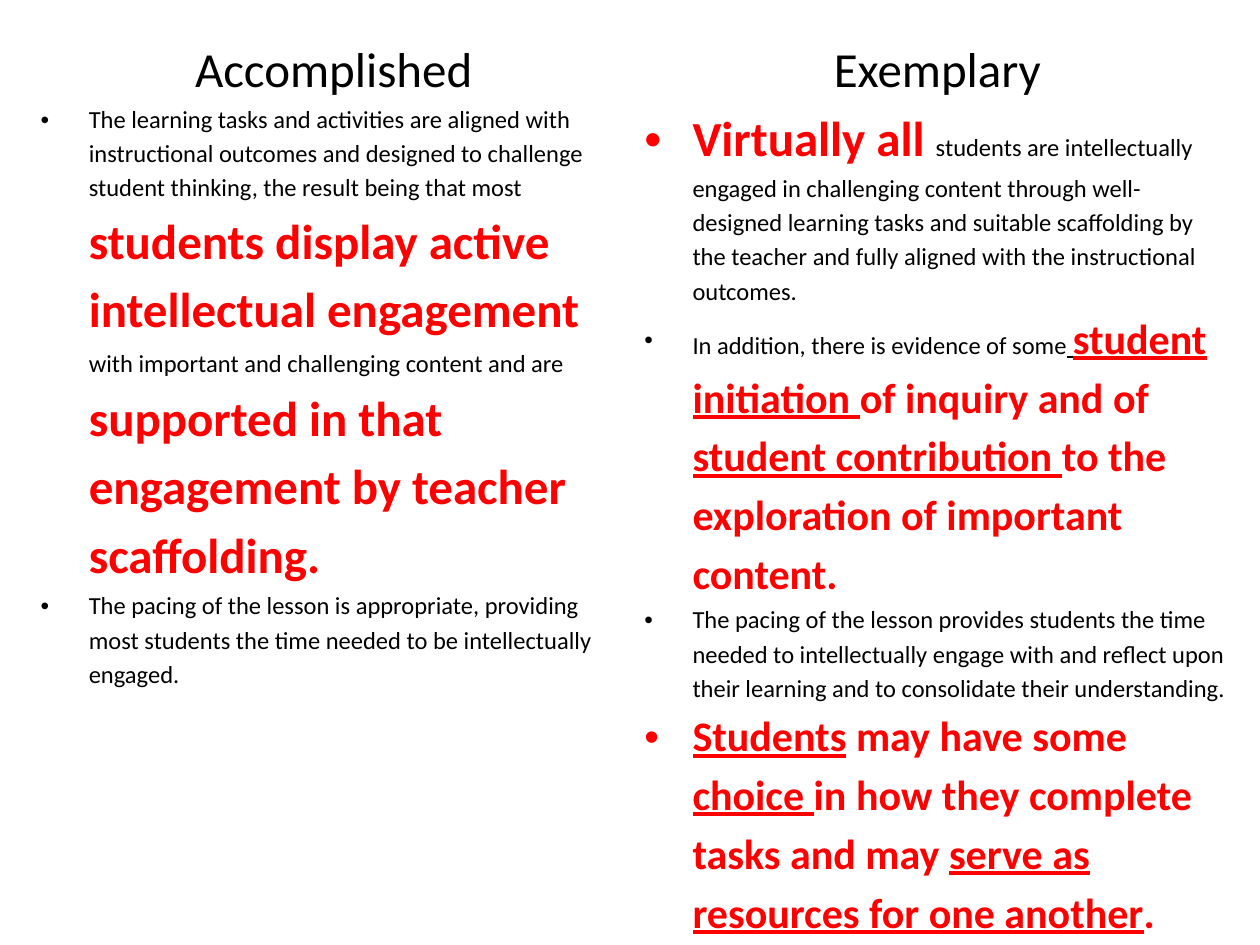
"""Build a slide that compares accomplished and exemplary student engagement."""
from lxml import etree
from pptx import Presentation
from pptx.enum import text as t
from pptx.oxml import ns
from pptx.dml import color
from pptx.util import Cm, Pt

COLORS = {"plain": "000000", "key": "FF0000"}
FONT = "Calibri"

PLAIN = {"size": 14}
BIG = {"size": 28, "bold": True, "color": "key"}
KEY = {"size": 24, "bold": True, "color": "key"}
KEY_LINE = {**KEY, "underline": True}

HEADINGS = ["Accomplished", "Exemplary"]
ACCOMPLISHED = [
    [
        ("The learning tasks and activities are aligned with instructional outcomes and "
         "designed to challenge student thinking, the result being that most ", PLAIN),
        ("students display active intellectual engagement", BIG),
        (" ", KEY),
        ("with important and challenging content and are", PLAIN),
        (" ", {"size": 16}),
        ("supported in that engagement by teacher scaffolding.", BIG),
    ],
    [("The pacing of the lesson is appropriate, providing most students the time needed "
      "to be intellectually engaged.", PLAIN)],
]
EXEMPLARY = [
    [
        ("Virtually all ", BIG),
        ("students are intellectually engaged in challenging content through well-designed "
         "learning tasks and suitable scaffolding by the teacher and fully aligned with "
         "the instructional outcomes.", PLAIN),
    ],
    [
        ("In addition, there is evidence of some", PLAIN),
        (" ", {"size": 14, "underline": True}),
        ("student initiation ", KEY_LINE),
        ("of inquiry and of ", KEY),
        ("student contribution ", KEY_LINE),
        ("to the exploration of important content.", KEY),
    ],
    [("The pacing of the lesson provides students the time needed to intellectually engage "
      "with and reflect upon their learning and to consolidate their understanding.", PLAIN)],
    [
        ("Students", KEY_LINE),
        (" may have some ", KEY),
        ("choice ", KEY_LINE),
        ("in how they complete tasks and may ", KEY),
        ("serve as resources for one another", KEY_LINE),
        (".", KEY),
    ],
]

LEFT, TOP = Cm(0.64), Cm(0.64)
COLUMN_WIDTH = Cm(12.17)
ROW_HEIGHTS = [Cm(1.3), Cm(16.69)]
SIDE_MARGIN = Cm(0.18)
INDENT = Cm(0.97)


def add_text(paragraph, content, size=14, bold=False, underline=False, color_name="plain"):
    run = paragraph.add_run()
    run.text = content
    font = run.font
    font.name, font.size, font.bold, font.underline = FONT, Pt(size), bold, underline
    font.color.rgb = color.RGBColor.from_string(COLORS[color_name])


def add_bullet(paragraph):
    properties = paragraph._p.get_or_add_pPr()
    properties.set("marL", str(INDENT))
    properties.set("indent", str(-INDENT))
    etree.SubElement(properties, ns.qn("a:buFont"), typeface="Arial")
    etree.SubElement(properties, ns.qn("a:buChar"), char="•")


def fill_cell(cell, paragraphs, bulleted):
    cell.fill.background()
    cell.margin_left = cell.margin_right = SIDE_MARGIN
    cell.margin_top = cell.margin_bottom = 0
    cell.vertical_anchor = t.MSO_ANCHOR.TOP if bulleted else t.MSO_ANCHOR.MIDDLE
    frame = cell.text_frame
    for index, runs in enumerate(paragraphs):
        paragraph = frame.add_paragraph() if index else frame.paragraphs[0]
        paragraph.line_spacing = 1.15
        paragraph.alignment = t.PP_ALIGN.LEFT if bulleted else t.PP_ALIGN.CENTER
        if bulleted:
            add_bullet(paragraph)
        for content, style in runs:
            options = dict(style)
            add_text(paragraph, content, color_name=options.pop("color", "plain"), **options)


def main():
    presentation = Presentation()
    presentation.slide_width, presentation.slide_height = Cm(25.4), Cm(19.05)
    slide = presentation.slides.add_slide(presentation.slide_layouts[6])
    shape = slide.shapes.add_table(
        len(ROW_HEIGHTS), len(HEADINGS), LEFT, TOP,
        COLUMN_WIDTH * len(HEADINGS), sum(ROW_HEIGHTS))
    table = shape.table
    for row, height in zip(table.rows, ROW_HEIGHTS):
        row.height = height
    for column, (heading, body) in enumerate(zip(HEADINGS, [ACCOMPLISHED, EXEMPLARY])):
        table.columns[column].width = COLUMN_WIDTH
        fill_cell(table.cell(0, column), [[(heading, {"size": 28})]], bulleted=False)
        fill_cell(table.cell(1, column), body, bulleted=True)
    presentation.save("out.pptx")


if __name__ == "__main__":
    main()
